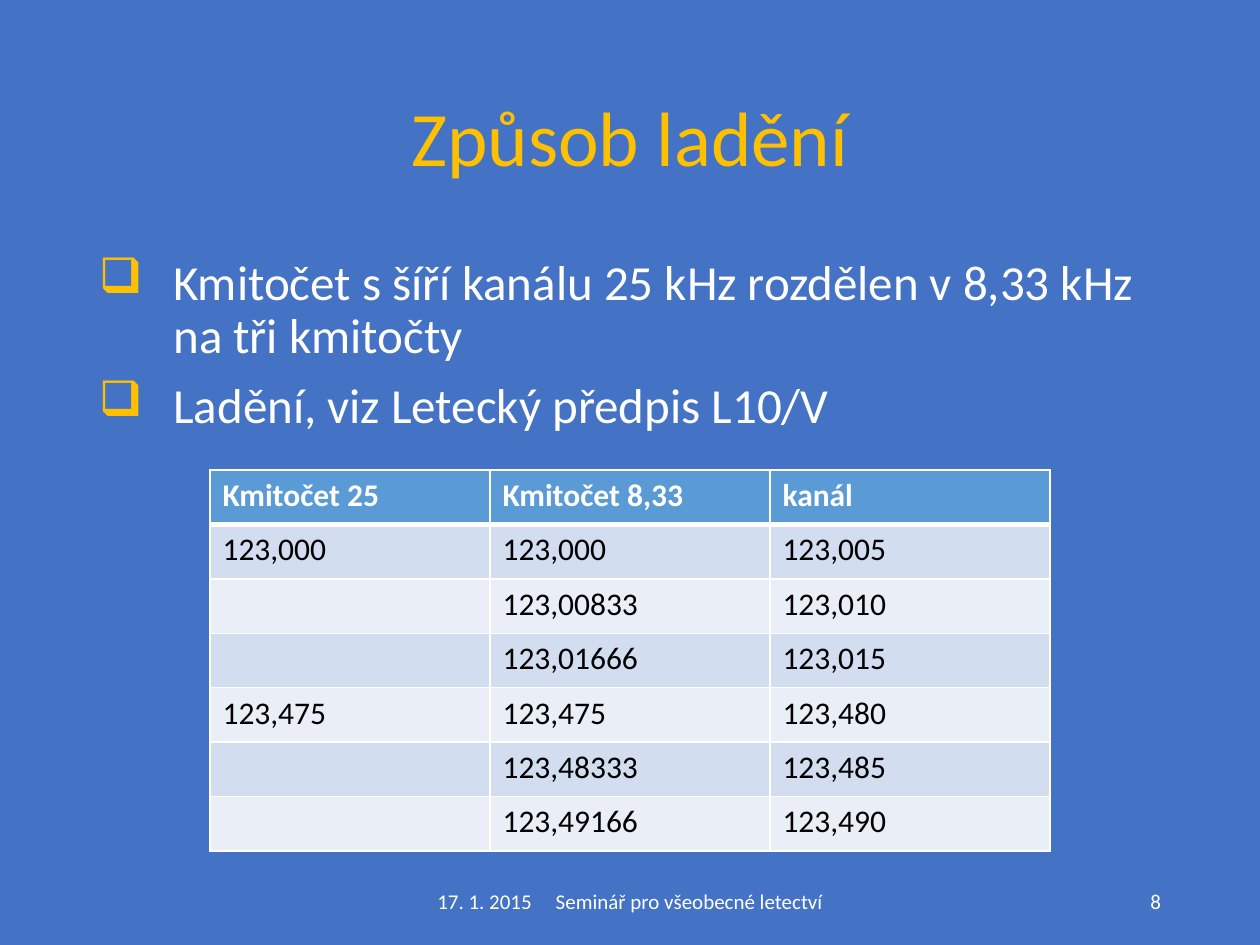
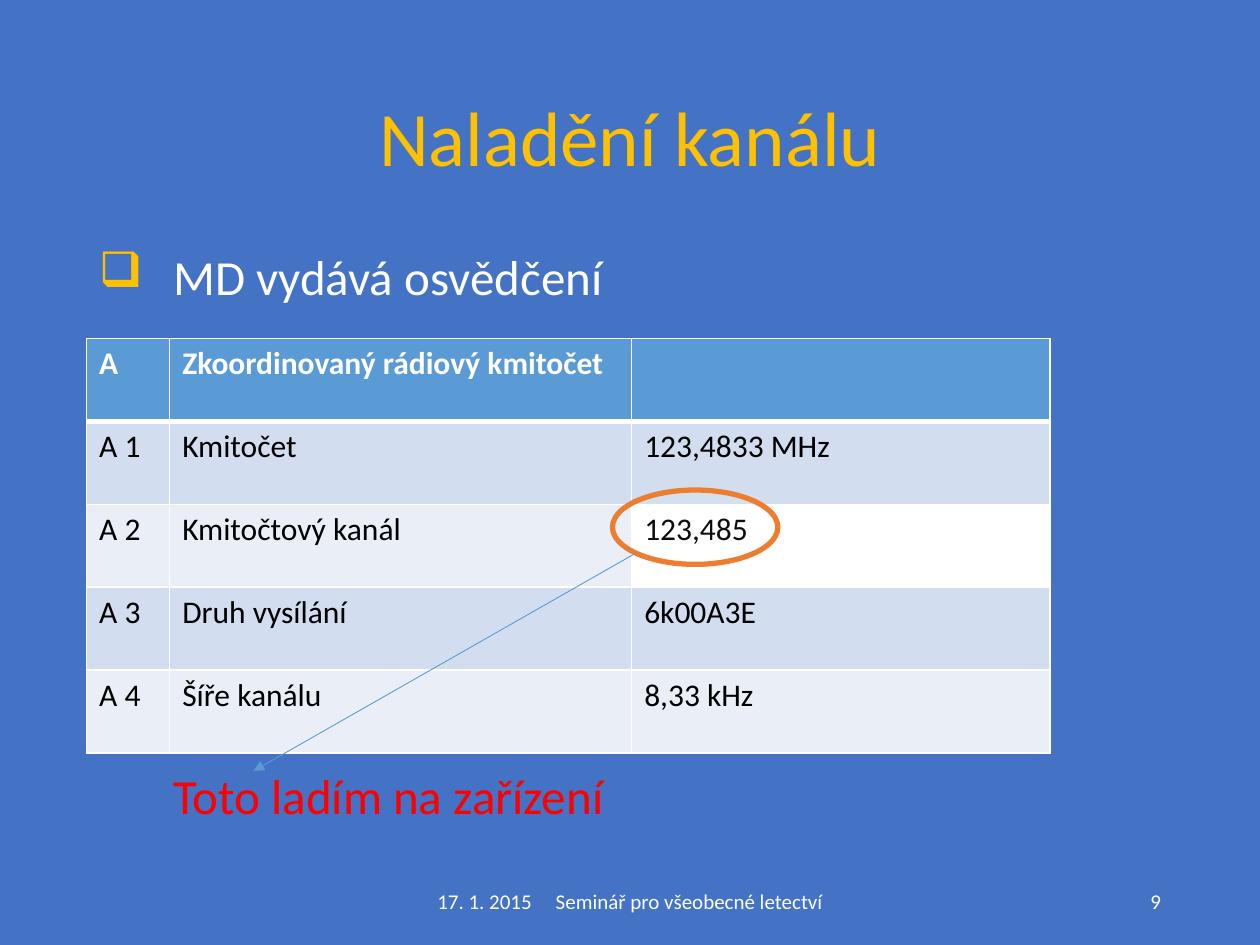
from lxml.etree import SubElement
from pptx import Presentation
from pptx.dml.color import RGBColor
from pptx.enum.shapes import MSO_CONNECTOR, MSO_SHAPE
from pptx.enum.text import MSO_ANCHOR, MSO_AUTO_SIZE, PP_ALIGN
from pptx.oxml import parse_xml
from pptx.oxml.ns import nsdecls, qn
from pptx.util import Pt

BLUE, GOLD, WHITE, BLACK, RED = "4472C4", "FFC000", "FFFFFF", "000000", "FF0000"
HEADER_FILL, ORANGE = "5B9BD5", "ED7D31"
BAND_FILLS = ("D2DEEF", "EAEFF7")
FONT = "Calibri"
MARGIN, CONTENT_WIDTH = 49.5, 621
BULLET_INDENT = 42.5
TITLE_BOX = (MARGIN, 29, CONTENT_WIDTH, 104)
BODY_BOX = (MARGIN, 144, CONTENT_WIDTH, 343)
FOOTER_BOX = (238.5, 500.5, 243, 28.75)
NUMBER_BOX = (508.5, 500.5, 162, 28.75)
FOOTER_DATE, FOOTER_EVENT = "17. 1. 2015", "Seminář pro všeobecné letectví"
FOOTER_GAP = 10.9

FREQUENCY_ROWS = [
    ("Kmitočet 25", "Kmitočet 8,33", "kanál"),
    ("123,000", "123,000", "123,005"),
    ("", "123,00833", "123,010"),
    ("", "123,01666", "123,015"),
    ("123,475", "123,475", "123,480"),
    ("", "123,48333", "123,485"),
    ("", "123,49166", "123,490"),
]
CERTIFICATE_ROWS = [
    ("A", "Zkoordinovaný rádiový kmitočet", ""),
    ("A 1", "Kmitočet", "123,4833 MHz"),
    ("A 2", "Kmitočtový kanál", "123,485"),
    ("A 3", "Druh vysílání", "6k00A3E"),
    ("A 4", "Šíře kanálu", "8,33 kHz"),
]


def color(hex_string):
    return RGBColor.from_string(hex_string)


def points(values):
    return [Pt(value) for value in values]


def fill_solid(fill, hex_string):
    fill.solid()
    fill.fore_color.rgb = color(hex_string)


def write_text(frame, paragraphs, size=18, font_color=WHITE, bold=False,
               align=PP_ALIGN.LEFT, spacing=None, before=None, bullet=None):
    """Write paragraphs, each one a string or a list of run strings."""
    for index, content in enumerate(paragraphs):
        paragraph = frame.add_paragraph() if index else frame.paragraphs[0]
        paragraph.alignment = align
        if spacing:
            paragraph.line_spacing = spacing
        if before is not None:
            paragraph.space_before = Pt(before)
        if bullet:
            add_bullet(paragraph, bullet)
        for text in [content] if isinstance(content, str) else content:
            run = paragraph.add_run()
            run.text = text
            run.font.name = FONT
            run.font.size = Pt(size)
            run.font.bold = bold
            run.font.color.rgb = color(font_color)


def add_bullet(paragraph, character):
    properties = paragraph._p.get_or_add_pPr()
    properties.set("marL", str(Pt(BULLET_INDENT)))
    properties.set("indent", str(-Pt(BULLET_INDENT)))
    bullet_color = SubElement(properties, qn("a:buClr"))
    SubElement(bullet_color, qn("a:srgbClr"), val=GOLD)
    SubElement(properties, qn("a:buChar"), char=character)


def add_text(slide, box, paragraphs, anchor=MSO_ANCHOR.TOP, **text_format):
    frame = slide.shapes.add_textbox(*points(box)).text_frame
    frame.word_wrap = True
    frame.vertical_anchor = anchor
    write_text(frame, paragraphs, **text_format)
    return frame


def add_body(slide, paragraphs, spacing):
    add_text(slide, BODY_BOX, paragraphs, size=28, spacing=spacing, before=10, bullet="❑")


def add_footer(slide, number):
    frame = add_text(slide, FOOTER_BOX, [[FOOTER_DATE, " ", FOOTER_EVENT]],
                     anchor=MSO_ANCHOR.MIDDLE, size=12, align=PP_ALIGN.CENTER)
    gap = frame.paragraphs[0].runs[1]
    gap._r.get_or_add_rPr().set("spc", str(round(FOOTER_GAP * 100)))
    add_text(slide, NUMBER_BOX, [str(number)], anchor=MSO_ANCHOR.MIDDLE,
             size=12, align=PP_ALIGN.RIGHT)


def add_base_slide(presentation, title, number):
    """Add a slide with the shared background, title and footer."""
    slide = presentation.slides.add_slide(presentation.slide_layouts[5])
    fill_solid(slide.background.fill, BLUE)
    placeholder = slide.shapes.title
    placeholder.left, placeholder.top, placeholder.width, placeholder.height = points(TITLE_BOX)
    frame = placeholder.text_frame
    frame.auto_size = MSO_AUTO_SIZE.NONE
    frame.vertical_anchor = MSO_ANCHOR.MIDDLE
    write_text(frame, [title], size=44, font_color=GOLD, align=PP_ALIGN.CENTER, spacing=0.9)
    add_footer(slide, number)
    return slide


def set_borders(cell, top, bottom):
    properties = cell._tc.get_or_add_tcPr()
    for side, width in (("L", 1), ("R", 1), ("T", top), ("B", bottom)):
        properties.append(parse_xml(
            f'<a:ln{side} {nsdecls("a")} w="{Pt(width)}"><a:solidFill>'
            f'<a:srgbClr val="{WHITE}"/></a:solidFill></a:ln{side}>'))


def add_banded_table(slide, left, top, column_widths, row_height, rows):
    box = (left, top, sum(column_widths), row_height * len(rows))
    table = slide.shapes.add_table(len(rows), len(column_widths), *points(box)).table
    for column, width in zip(table.columns, column_widths):
        column.width = Pt(width)
    for row_index, values in enumerate(rows):
        table.rows[row_index].height = Pt(row_height)
        is_header = row_index == 0
        for column_index, value in enumerate(values):
            cell = table.cell(row_index, column_index)
            set_borders(cell, top=3 if row_index == 1 else 1, bottom=3 if is_header else 1)
            fill_solid(cell.fill, HEADER_FILL if is_header else BAND_FILLS[(row_index - 1) % 2])
            if value:
                write_text(cell.text_frame, [value], bold=is_header,
                           font_color=WHITE if is_header else BLACK)
    return table


def add_highlight(slide, box, arrow_start, arrow_end):
    """Ring a table value and lead an arrow away; arrow ends are relative to the ring."""
    left, top = box[:2]
    ring = slide.shapes.add_shape(MSO_SHAPE.OVAL, *points(box))
    ring.shadow.inherit = False
    fill_solid(ring.fill, WHITE)
    ring_color = ring._element.spPr.find(qn("a:solidFill"))[0]
    SubElement(ring_color, qn("a:alpha"), val="5000")
    ring.line.color.rgb = color(ORANGE)
    ring.line.width = Pt(3)

    ends = [(left + x, top + y) for x, y in (arrow_start, arrow_end)]
    arrow = slide.shapes.add_connector(MSO_CONNECTOR.STRAIGHT, *points(ends[0] + ends[1]))
    arrow.line.color.rgb = color(HEADER_FILL)
    arrow.line.width = Pt(0.5)
    SubElement(arrow.line._get_or_add_ln(), qn("a:tailEnd"), type="triangle")
    SubElement(arrow._element.spPr, qn("a:effectLst"))


def add_tuning_slide(presentation):
    slide = add_base_slide(presentation, "Způsob ladění", 8)
    add_body(slide, ["Kmitočet s šíří kanálu 25 kHz rozdělen v 8,33 kHz na tři kmitočty",
                     "Ladění, viz Letecký předpis L10/V"], spacing=0.9)
    add_banded_table(slide, 120, 268.5, [160] * 3, 31.15, FREQUENCY_ROWS)


def add_channel_slide(presentation):
    slide = add_base_slide(presentation, "Naladění kanálu", 9)
    add_body(slide, ["MD vydává osvědčení"], spacing=0.8)
    table = add_banded_table(slide, MARGIN, 193.5, [47.5, 264, 239], 47.35, CERTIFICATE_ROWS)
    fill_solid(table.cell(2, 2).fill, WHITE)
    add_text(slide, (MARGIN + BULLET_INDENT, 440.5, 400, 45), ["Toto ladím na zařízení"],
             size=28, font_color=RED, spacing=0.8, before=10)
    add_highlight(slide, (350, 280, 94.5, 42.5), arrow_start=(13.5, 36), arrow_end=(-205, 160.5))


def main():
    presentation = Presentation()
    presentation.slide_width, presentation.slide_height = Pt(720), Pt(540)
    add_tuning_slide(presentation)
    add_channel_slide(presentation)
    presentation.save("out.pptx")


if __name__ == "__main__":
    main()
